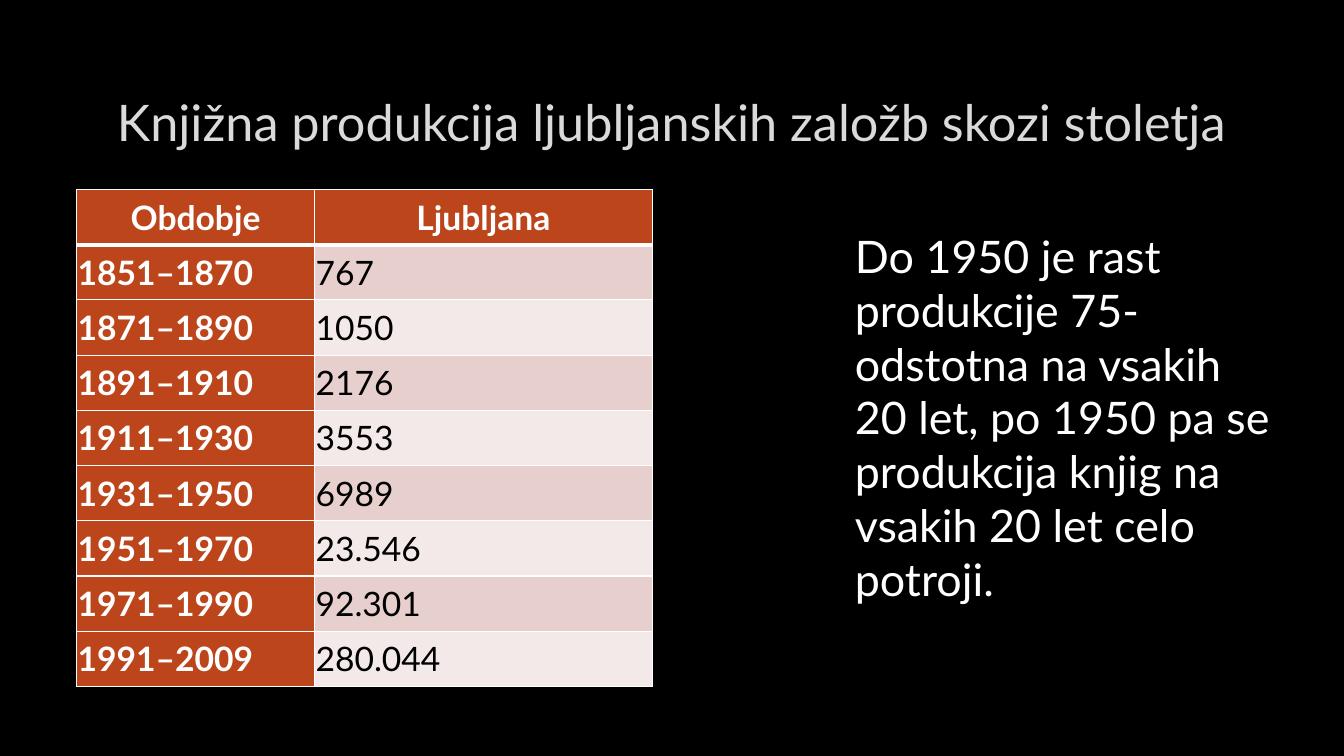
from lxml import etree
from pptx import Presentation
from pptx.dml.color import RGBColor
from pptx.enum import text as tx
from pptx.oxml import ns
from pptx.util import Inches, Pt

# Content
TITLE = "Knjižna produkcija ljubljanskih založb skozi stoletja"
NOTE = ("Do 1950 je rast produkcije 75-odstotna na vsakih 20 let, "
        "po 1950 pa se produkcija knjig na vsakih 20 let celo potroji.")
ROWS = [
    ("Obdobje", "Ljubljana"),
    ("1851–1870", "767"),
    ("1871–1890", "1050"),
    ("1891–1910", "2176"),
    ("1911–1930", "3553"),
    ("1931–1950", "6989"),
    ("1951–1970", "23.546"),
    ("1971–1990", "92.301"),
    ("1991–2009", "280.044"),
]
COLS = (2.36, 3.35)
ROW_H = 4.93 / len(ROWS)
FONT = "Lato"
BLACK, WHITE, GREY, RUST = "000000", "FFFFFF", "DADADA", "BC451B"
BANDS = ("F3E9E8", "E7CFCD")


def paint(fill, color):
    fill.solid()
    fill.fore_color.rgb = RGBColor.from_string(color)


def write(frame, words, size, color, align, bold=False):
    frame.text = words
    para = frame.paragraphs[0]
    para.alignment = align
    font = para.runs[0].font
    font.name, font.size, font.bold = FONT, Pt(size), bold
    paint(font.fill, color)


def add_text(slide, box, words, size, color, align, anchor):
    frame = slide.shapes.add_textbox(*map(Inches, box)).text_frame
    frame.word_wrap = True
    frame.vertical_anchor = anchor
    write(frame, words, size, color, align)


def add_edge(cell, side, width):
    props = cell._tc.get_or_add_tcPr()
    line = etree.SubElement(props, ns.qn("a:ln" + side), w=str(Pt(width)))
    fill = etree.SubElement(line, ns.qn("a:solidFill"))
    etree.SubElement(fill, ns.qn("a:srgbClr"), val=WHITE)


def style_cell(cell, row, col, words):
    head = row == 0
    label = head or col == 0
    cell.margin_left = cell.margin_right = Inches(0.01)
    cell.margin_top = cell.margin_bottom = Inches(0.01)
    cell.vertical_anchor = tx.MSO_ANCHOR.MIDDLE
    align = tx.PP_ALIGN.CENTER if head else tx.PP_ALIGN.LEFT
    write(cell.text_frame, words, 24, WHITE if label else BLACK, align, label)
    # The rule under the header is thicker
    for side in "LRTB":
        thick = (row, side) in ((0, "B"), (1, "T"))
        add_edge(cell, side, 3 if thick else 1)
    paint(cell.fill, RUST if label else BANDS[row % 2])


def main():
    deck = Presentation()
    deck.slide_width, deck.slide_height = Inches(13.33), Inches(7.5)
    slide = deck.slides.add_slide(deck.slide_layouts[6])
    paint(slide.background.fill, BLACK)

    # Title
    add_text(slide, (1, 0.67, 11.32, 1.06), TITLE, 36, GREY,
             tx.PP_ALIGN.CENTER, tx.MSO_ANCHOR.MIDDLE)

    # Table of book output
    table = slide.shapes.add_table(
        len(ROWS), len(COLS), Inches(0.76), Inches(1.88),
        Inches(sum(COLS)), Inches(ROW_H * len(ROWS))).table
    for col, width in enumerate(COLS):
        table.columns[col].width = Inches(width)
    table.first_col = True
    for row, texts in enumerate(ROWS):
        table.rows[row].height = Inches(ROW_H)
        for col, words in enumerate(texts):
            style_cell(table.cell(row, col), row, col, words)

    # Comment beside the table
    add_text(slide, (8.38, 2.22, 4.39, 3.87), NOTE, 32, WHITE,
             tx.PP_ALIGN.LEFT, tx.MSO_ANCHOR.TOP)

    deck.save("out.pptx")


if __name__ == "__main__":
    main()
